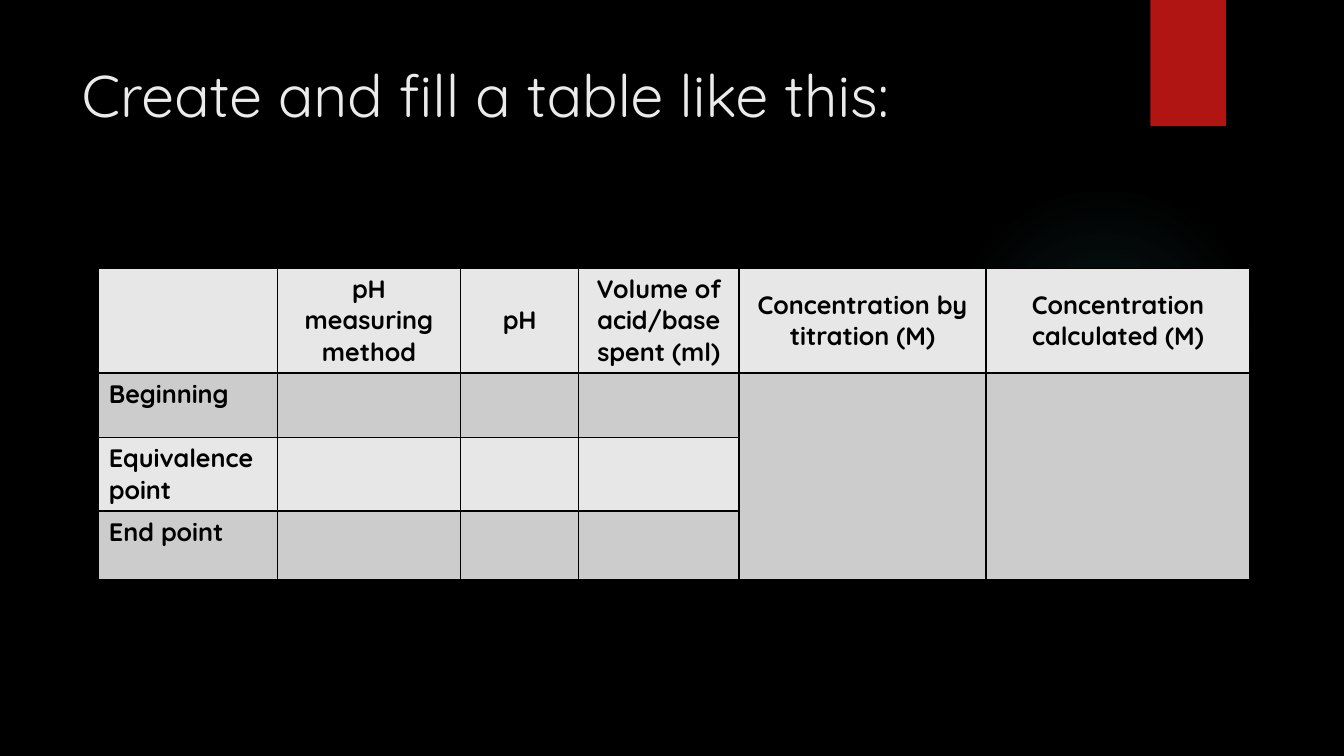
from lxml import etree
from pptx import Presentation
from pptx import util as u
from pptx.dml.color import RGBColor
from pptx.enum import shapes, text
from pptx.oxml import parse_xml
from pptx.oxml.ns import nsdecls, qn

FONT = "Quicksand"
BLACK = "000000"
LIGHT, DARK = "E7E7E7", "CCCCCC"


def paint(fill, color):
    fill.solid()
    fill.fore_color.rgb = RGBColor.from_string(color)


def style(paragraph, size, color, bold=False):
    paragraph.font.name = FONT
    paragraph.font.size = u.Pt(size)
    paragraph.font.bold = bold
    paint(paragraph.font.fill, color)


presentation = Presentation()
presentation.slide_width = u.Inches(13.33)
presentation.slide_height = u.Inches(7.5)
slide = presentation.slides.add_slide(presentation.slide_layouts[5])
paint(slide.background.fill, BLACK)

# Faint round glow behind the table
glow = slide.shapes.add_shape(shapes.MSO_SHAPE.OVAL, u.Inches(9.41), u.Inches(1.83),
                              u.Inches(3.08), u.Inches(3.08))
glow.shadow.inherit = False
glow.line.fill.background()
stops = "".join(
    f'<a:gs pos="{position}000"><a:srgbClr val="50B9C1"><a:alpha val="{alpha}000"/></a:srgbClr></a:gs>'
    for position, alpha in [(0, 7), (36, 6), (69, 0), (100, 0)])
glow_fill = parse_xml(
    f'<a:gradFill {nsdecls("a")} rotWithShape="1"><a:gsLst>{stops}</a:gsLst><a:path path="circle">'
    '<a:fillToRect l="50000" t="50000" r="50000" b="50000"/></a:path></a:gradFill>')
glow._element.spPr.find(qn("a:prstGeom")).addnext(glow_fill)

ribbon = slide.shapes.add_shape(shapes.MSO_SHAPE.RECTANGLE, u.Inches(11.41), 0,
                                u.Inches(0.75), u.Inches(1.25))
ribbon.shadow.inherit = False
ribbon.line.fill.background()
paint(ribbon.fill, "B01513")

title = slide.shapes.title
title.left, title.top = u.Inches(0.71), u.Inches(0.5)
title.width, title.height = u.Inches(10.29), u.Inches(0.87)
title.text_frame.text = "Create and fill a table like this:"
title.text_frame.vertical_anchor = text.MSO_ANCHOR.MIDDLE
title.text_frame.paragraphs[0].alignment = text.PP_ALIGN.LEFT
style(title.text_frame.paragraphs[0], 42, "EBEBEB")

headers = ["", "pH measuring method", "pH", "Volume of acid/base spent (ml)",
           "Concentration by titration (M)", "Concentration calculated (M)"]
stages = ["Beginning", "Equivalence point", "End point"]
rows = [headers] + [[stage] + [""] * 5 for stage in stages]
column_widths = [1.77, 1.82, 1.17, 1.59, 2.45, 2.62]
row_heights = [1.04, 0.64, 0.73, 0.68]

table = slide.shapes.add_table(
    len(rows), len(headers), u.Inches(0.98), u.Inches(2.66),
    u.Inches(sum(column_widths)), u.Inches(sum(row_heights))).table
for column, width in zip(table.columns, column_widths):
    column.width = u.Inches(width)
for row, height in zip(table.rows, row_heights):
    row.height = u.Inches(height)

for r, labels in enumerate(rows):
    for c, label in enumerate(labels):
        cell = table.cell(r, c)
        cell.text = label
        paragraph = cell.text_frame.paragraphs[0]
        style(paragraph, 18, BLACK, bold=True)
        if r == 0:
            cell.vertical_anchor = text.MSO_ANCHOR.MIDDLE
            paragraph.alignment = text.PP_ALIGN.CENTER
        properties = cell._tc.get_or_add_tcPr()
        for side in ("lnL", "lnR", "lnT", "lnB"):
            border = etree.SubElement(properties, qn(f"a:{side}"), w=str(u.Pt(1)))
            border_fill = etree.SubElement(border, qn("a:solidFill"))
            etree.SubElement(border_fill, qn("a:srgbClr"), val=BLACK)
        paint(cell.fill, DARK if r % 2 else LIGHT)

for c in (4, 5):
    table.cell(1, c).merge(table.cell(3, c))

presentation.save("out.pptx")
